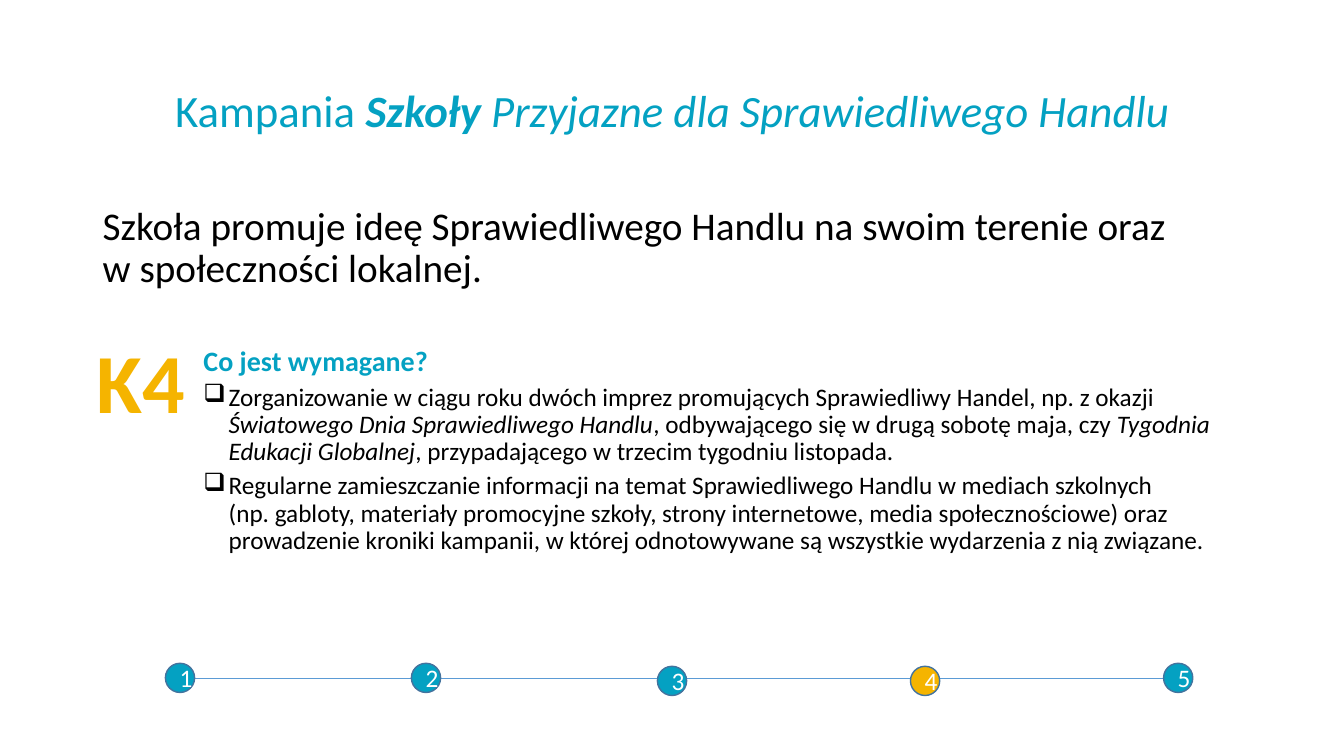
from lxml.etree import SubElement
from pptx import Presentation
from pptx.dml.color import RGBColor
from pptx.enum.shapes import MSO_CONNECTOR as Connector, MSO_SHAPE as Shape
from pptx.enum.text import MSO_ANCHOR as Anchor, PP_ALIGN as Align
from pptx.oxml.ns import qn
from pptx.util import Inches, Pt

TEAL, GOLD, BLACK, WHITE = "04A1C2", "F5B400", "000000", "FFFFFF"
FONT = "Calibri"

TITLE = [("Kampania ", ""), ("Szkoły ", "bi"), ("Przyjazne dla Sprawiedliwego Handlu", "i")]
LEAD = [("Szkoła promuje ideę Sprawiedliwego Handlu na swoim terenie oraz \nw społeczności lokalnej.", "")]
HEADING = [("Co jest wymagane?", "b")]
REQUIREMENTS = [
    [
        ("Zorganizowanie w ciągu roku dwóch imprez promujących Sprawiedliwy Handel, np. z okazji ", ""),
        ("Światowego Dnia Sprawiedliwego Handlu", "i"),
        (", odbywającego się w drugą sobotę maja, czy ", ""),
        ("Tygodnia Edukacji Globalnej", "i"),
        (", przypadającego w trzecim tygodniu listopada.", ""),
    ],
    [
        ("Regularne zamieszczanie informacji na temat Sprawiedliwego Handlu w mediach szkolnych \n"
         "(np. gabloty, materiały promocyjne szkoły, strony internetowe, media społecznościowe) oraz "
         "prowadzenie kroniki kampanii, w której odnotowywane są wszystkie wydarzenia z nią związane.", ""),
    ],
]
BADGE = [("K4", "b")]
STEPS = [(1.64, 6.58), (4.08, 6.58), (6.52, 6.61), (9.03, 6.61), (11.54, 6.58)]
CURRENT_STEP = 4
STEP_SIZE = 0.29


def color(value):
    return RGBColor.from_string(value)


def write(paragraph, runs, size, ink, align=Align.LEFT, before=0, spacing=None):
    paragraph.alignment = align
    paragraph.space_before = Pt(before)
    if spacing:
        paragraph.line_spacing = spacing
    for text, style in runs:
        for index, line in enumerate(text.split("\n")):
            if index:
                paragraph.add_line_break()
            run = paragraph.add_run()
            run.text = line
            run.font.name = FONT
            run.font.size = Pt(size)
            run.font.bold = "b" in style
            run.font.italic = "i" in style
            run.font.color.rgb = color(ink)


def indent(paragraph, margin, first=0, bullet=None):
    properties = paragraph._p.get_or_add_pPr()
    properties.set("marL", str(Inches(margin)))
    properties.set("indent", str(Inches(first)))
    if bullet:
        SubElement(properties, qn("a:buChar")).set("char", bullet)


def add_text_frame(slide, left, top, width, height, anchor=Anchor.TOP):
    box = slide.shapes.add_textbox(Inches(left), Inches(top), Inches(width), Inches(height))
    frame = box.text_frame
    frame.word_wrap = True
    frame.vertical_anchor = anchor
    return frame


def add_step(slide, number, left, top):
    shape = slide.shapes.add_shape(Shape.OVAL, Inches(left), Inches(top), Inches(STEP_SIZE), Inches(STEP_SIZE))
    shape.shadow.inherit = False
    shape.fill.solid()
    shape.fill.fore_color.rgb = color(GOLD if number == CURRENT_STEP else TEAL)
    shape.line.color.rgb = color("43739E")
    shape.line.width = Pt(1)
    shape.text_frame.vertical_anchor = Anchor.MIDDLE
    write(shape.text_frame.paragraphs[0], [(str(number), "")], 18, WHITE, Align.CENTER)


def main():
    presentation = Presentation()
    presentation.slide_width = Inches(13.33)
    presentation.slide_height = Inches(7.5)
    slide = presentation.slides.add_slide(presentation.slide_layouts[6])

    title = add_text_frame(slide, 0.92, 0.4, 11.5, 1.45, Anchor.MIDDLE)
    write(title.paragraphs[0], TITLE, 32, TEAL, Align.CENTER, spacing=0.9)

    track = slide.shapes.add_connector(Connector.STRAIGHT, Inches(1.73), Inches(6.73), Inches(11.61), Inches(6.73))
    track.line.color.rgb = color("5B9BD5")
    track.line.width = Pt(0.5)
    SubElement(track._element.spPr, qn("a:effectLst"))
    for number, (left, top) in enumerate(STEPS, 1):
        add_step(slide, number, left, top)

    body = add_text_frame(slide, 0.92, 2, 11.5, 4.76)
    write(body.paragraphs[0], LEAD, 28, BLACK, spacing=0.9)
    heading = body.add_paragraph()
    write(heading, HEADING, 20, TEAL, before=40, spacing=0.9)
    indent(heading, 1)
    for runs in REQUIREMENTS:
        requirement = body.add_paragraph()
        write(requirement, runs, 18, BLACK, before=5, spacing=0.9)
        indent(requirement, 1.25, -0.25, "❑")

    badge = add_text_frame(slide, 0.86, 3.22, 1.11, 1.11)
    write(badge.paragraphs[0], BADGE, 60, GOLD)

    presentation.save("out.pptx")


if __name__ == "__main__":
    main()
